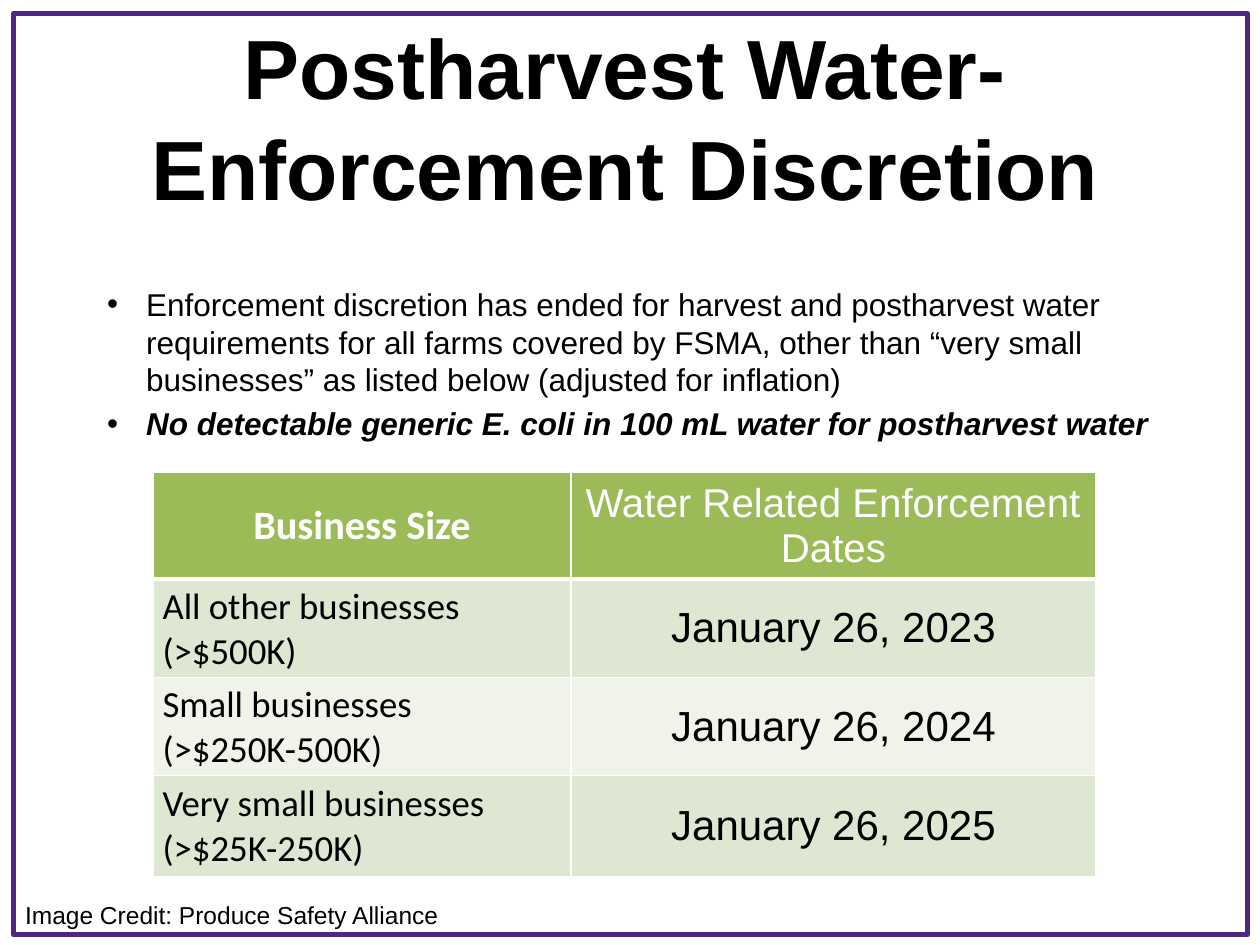
from typing import NamedTuple

from lxml import etree
from pptx import Presentation
from pptx.dml.color import RGBColor
from pptx.enum.shapes import MSO_SHAPE
from pptx.enum.text import MSO_ANCHOR, PP_ALIGN
from pptx.oxml.ns import qn
from pptx.util import Inches, Pt

LEFT, CENTER = PP_ALIGN.LEFT, PP_ALIGN.CENTER
TOP, MIDDLE = MSO_ANCHOR.TOP, MSO_ANCHOR.MIDDLE
RECTANGLE = MSO_SHAPE.RECTANGLE

COLORS = {
    "frame": "4F2782",
    "text": "000000",
    "white": "FFFFFF",
    "header": "9BBB59",
    "band_dark": "DEE7D1",
    "band_light": "EFF3EA",
}
COLUMN_WIDTHS = (3.31, 4.17)
ROW_HEIGHTS = (0.82, 0.75, 0.75, 0.8)


class Style(NamedTuple):
    size: float
    font: str = "Arial"
    color: str = "text"
    bold: bool = False
    italic: bool = False
    align: PP_ALIGN = LEFT


class Line(NamedTuple):
    text: str
    style: Style


TITLE = Style(48, bold=True, align=CENTER)
BODY = Style(18)
SIZE_HEADER = Style(23, "Calibri", "white", bold=True, align=CENTER)
DATE_HEADER = Style(23, color="white", align=CENTER)
SIZE_CELL = Style(21, "Calibri")
DATE_CELL = Style(24, align=CENTER)

BULLETS = (
    Line("Enforcement discretion has ended for harvest and postharvest water "
         "requirements for all farms covered by FSMA, other than “very small "
         "businesses” as listed below (adjusted for inflation)", BODY),
    Line("No detectable generic E. coli in 100 mL water for postharvest water",
         BODY._replace(bold=True, italic=True)),
)
DEADLINES = (
    (("All other businesses (>$500K)",), "January 26, 2023"),
    (("Small businesses", "(>$250K-500K)"), "January 26, 2024"),
    (("Very small businesses", "(>$25K-250K)"), "January 26, 2025"),
)


def rgb(name: str) -> RGBColor:
    return RGBColor.from_string(COLORS[name])


def add_bullet(p) -> None:
    pPr = p._p.get_or_add_pPr()
    pPr.set("marL", str(Inches(0.31)))
    pPr.set("indent", str(-Inches(0.31)))
    etree.SubElement(pPr, qn("a:buFont"), typeface="Arial")
    etree.SubElement(pPr, qn("a:buChar"), char="•")


def write(tf, lines, bulleted: bool = False) -> None:
    for i, line in enumerate(lines):
        p = tf.add_paragraph() if i else tf.paragraphs[0]
        style = line.style
        p.alignment = style.align
        if bulleted:
            if i:
                p.space_before = Pt(3.6)
            add_bullet(p)
        r = p.add_run()
        r.text = line.text
        r.font.size, r.font.name = Pt(style.size), style.font
        r.font.bold, r.font.italic = style.bold, style.italic
        r.font.color.rgb = rgb(style.color)


def add_text(s, box, lines, anchor=TOP, bulleted: bool = False):
    tf = s.shapes.add_textbox(*map(Inches, box)).text_frame
    tf.word_wrap = True
    tf.vertical_anchor = anchor
    write(tf, lines, bulleted)
    return tf


def set_borders(cell, bottom: float = 1) -> None:
    tcPr = cell._tc.get_or_add_tcPr()
    widths = {"a:lnL": 1, "a:lnR": 1, "a:lnT": 1, "a:lnB": bottom}
    for tag, width in widths.items():
        ln = etree.SubElement(tcPr, qn(tag), w=str(Pt(width)))
        fill = etree.SubElement(ln, qn("a:solidFill"))
        etree.SubElement(fill, qn("a:srgbClr"), val=COLORS["white"])


def fill_cell(cell, lines, fill: str, bottom: float = 1) -> None:
    cell.margin_left = cell.margin_right = Inches(0.07)
    cell.margin_top = cell.margin_bottom = Inches(0.04)
    cell.vertical_anchor = MIDDLE
    set_borders(cell, bottom)
    cell.fill.solid()
    cell.fill.fore_color.rgb = rgb(fill)
    write(cell.text_frame, lines)


def add_deadline_table(s) -> None:
    rows, cols = len(ROW_HEIGHTS), len(COLUMN_WIDTHS)
    box = (1.22, 3.75, sum(COLUMN_WIDTHS), sum(ROW_HEIGHTS))
    table = s.shapes.add_table(rows, cols, *map(Inches, box)).table
    for column, width in zip(table.columns, COLUMN_WIDTHS):
        column.width = Inches(width)
    for row, height in zip(table.rows, ROW_HEIGHTS):
        row.height = Inches(height)

    headers = (Line("Business Size", SIZE_HEADER),
               Line("Water Related Enforcement Dates", DATE_HEADER))
    for col, header in enumerate(headers):
        fill_cell(table.cell(0, col), [header], "header", bottom=3)
    for row, (size, date) in enumerate(DEADLINES, start=1):
        band = "band_dark" if row % 2 else "band_light"
        fill_cell(table.cell(row, 0), [Line(t, SIZE_CELL) for t in size], band)
        fill_cell(table.cell(row, 1), [Line(date, DATE_CELL)], band)


def add_frame(s) -> None:
    sp = s.shapes.add_shape(RECTANGLE, *map(Inches, (0.11, 0.11, 9.79, 7.31)))
    sp.shadow.inherit = False
    sp.fill.background()
    sp.line.color.rgb = rgb("frame")
    sp.line.width = Pt(3)


def main() -> None:
    prs = Presentation()
    prs.slide_width, prs.slide_height = Inches(10), Inches(7.5)
    s = prs.slides.add_slide(prs.slide_layouts[6])
    add_frame(s)
    add_text(s, (0.5, 0.53, 8.92, 0.79),
             [Line("Postharvest Water-Enforcement Discretion", TITLE)], MIDDLE)
    body = add_text(s, (0.5, 2.16, 8.92, 4.81), BULLETS, bulleted=True)
    body.margin_left, body.margin_top = Inches(0.35), Inches(0.1)
    add_deadline_table(s)
    add_text(s, (0.1, 7.09, 3.98, 0.34),
             [Line("Image Credit: Produce Safety Alliance", Style(14))])
    prs.save("out.pptx")


if __name__ == "__main__":
    main()
